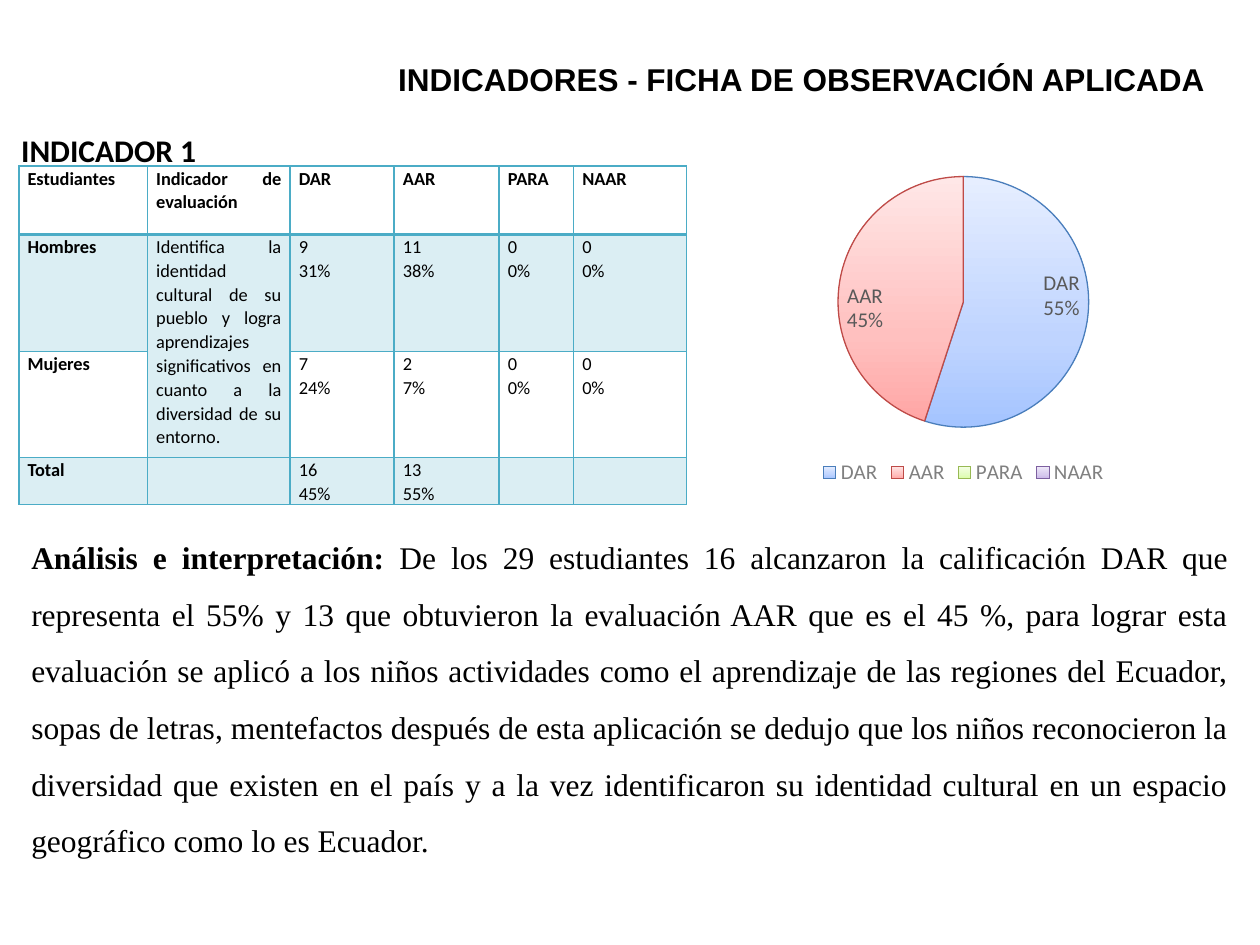
from lxml import etree
from pptx import Presentation
from pptx import util as u
from pptx.chart.data import CategoryChartData
from pptx.dml.color import RGBColor
from pptx.enum import chart as ch, text
from pptx.oxml import parse_xml
from pptx.oxml.ns import nsdecls, qn

Pt = u.Pt
BORDER = "4BACC6"
HEADERS = ["Estudiantes", "Indicador de evaluación", "DAR", "AAR", "PARA", "NAAR"]
CRITERION = ("Identifica la identidad cultural de su pueblo y logra aprendizajes "
             "significativos en cuanto a la diversidad de su entorno.")
ROWS = [
    HEADERS,
    ["Hombres", CRITERION, "9\n31%", "11\n38%", "0\n0%", "0\n0%"],
    ["Mujeres", "", "7\n24%", "2\n7%", "0\n0%", "0\n0%"],
    ["Total", "", "16\n45%", "13\n55%", "", ""],
]
COL_WIDTHS = [73.5, 81.5, 59.5, 60, 42.5, 64.5]
ROW_HEIGHTS = [39, 67, 60.5, 26]
# category: value, outline, gradient stops from bottom to top
SLICES = {
    "DAR": (55, "4A7EBB", ["A4C4FF", "BFD4FF", "E6EEFF"]),
    "AAR": (45, "BE4B48", ["FFA6A5", "FFC0BF", "FFE7E7"]),
    "PARA": (0, "98B954", ["DAFDA7", "E4FCC2", "F5FFE7"]),
    "NAAR": (0, "7D60A0", ["C9B5E8", "D8CBEE", "F0EAF9"]),
}
ANALYSIS = ("De los 29 estudiantes 16 alcanzaron la calificación DAR que representa el 55% "
            "y 13 que obtuvieron la evaluación AAR que es el 45 %, para lograr esta evaluación "
            "se aplicó a los niños actividades como el aprendizaje de las regiones del Ecuador, "
            "sopas de letras, mentefactos después de esta aplicación se dedujo que los niños "
            "reconocieron la diversidad que existen en el país y a la vez identificaron su "
            "identidad cultural en un espacio geográfico como lo es Ecuador.")


def rgb(color):
    return RGBColor.from_string(color)


def set_font(font, name, size, color="000000", bold=False):
    font.name, font.size, font.bold = name, Pt(size), bold
    font.color.rgb = rgb(color)


def add_text(s, box, name, wrap=True):
    tf = s.shapes.add_textbox(*map(Pt, box)).text_frame
    tf.word_wrap = wrap
    p = tf.paragraphs[0]
    set_font(p.font, name, 18, bold=True)
    return p


def add_heading(s, box, words, name, wrap=True):
    add_text(s, box, name, wrap).add_run().text = words


def add_analysis(s, box):
    p = add_text(s, box, "Times New Roman")
    p.alignment = text.PP_ALIGN.JUSTIFY
    p.line_spacing, p.space_after = 1.5, Pt(8)
    for words, bold in (("Análisis e interpretación: ", True), (ANALYSIS, False)):
        r = p.add_run()
        r.text = words
        r.font.bold = bold


def set_borders(cell, row):
    tc_pr = cell._tc.get_or_add_tcPr()
    for side in "LRTB":
        width = 2 if (row, side) in ((0, "B"), (1, "T")) else 1
        tc_pr.append(parse_xml(
            f'<a:ln{side} {nsdecls("a")} w="{Pt(width)}"><a:solidFill>'
            f'<a:srgbClr val="{BORDER}"/></a:solidFill></a:ln{side}>'))


def set_fill(cell, shaded):
    if not shaded:
        cell.fill.background()
        return
    cell.fill.solid()
    cell.fill.fore_color.rgb = rgb(BORDER)
    color = cell._tc.tcPr.find(".//" + qn("a:solidFill") + "[last()]/" + qn("a:srgbClr"))
    color = cell._tc.tcPr.find(qn("a:solidFill")).find(qn("a:srgbClr"))
    etree.SubElement(color, qn("a:alpha"), val="20000")


def add_results_table(s, left, top):
    table = s.shapes.add_table(len(ROWS), len(HEADERS), Pt(left), Pt(top),
                               Pt(sum(COL_WIDTHS)), Pt(sum(ROW_HEIGHTS))).table
    table.first_row = table.horz_banding = False
    for col, width in zip(table.columns, COL_WIDTHS):
        col.width = Pt(width)
    for row, height in zip(table.rows, ROW_HEIGHTS):
        row.height = Pt(height)
    table.cell(1, 1).merge(table.cell(2, 1))
    for i, values in enumerate(ROWS):
        for j, value in enumerate(values):
            cell = table.cell(i, j)
            cell.margin_left = cell.margin_right = Pt(5)
            cell.margin_top = cell.margin_bottom = 0
            cell.text = value
            for p in cell.text_frame.paragraphs:
                p.alignment, p.line_spacing = text.PP_ALIGN.JUSTIFY, 1.07
                set_font(p.font, "Calibri", 10.5, bold=i == 0 or j == 0)
            set_borders(cell, i)
            set_fill(cell, i in (1, 3) or (i, j) == (2, 1))


def style_slice(point, outline, colors):
    point.format.line.color.rgb = rgb(outline)
    point.format.line.width = Pt(0.75)
    stops = "".join(f'<a:gs pos="{pos}"><a:srgbClr val="{c}"/></a:gs>'
                    for pos, c in zip((0, 35000, 100000), colors))
    sp_pr = point.format.line._get_or_add_ln().getparent()
    sp_pr.insert(0, parse_xml(f'<a:gradFill {nsdecls("a")} rotWithShape="1"><a:gsLst>{stops}'
                              '</a:gsLst><a:lin ang="16200000" scaled="1"/></a:gradFill>'))


def add_pie(s, box):
    data = CategoryChartData()
    data.categories = list(SLICES)
    data.add_series("Series 1", [value for value, *_ in SLICES.values()])
    chart = s.shapes.add_chart(ch.XL_CHART_TYPE.PIE, *map(Pt, box), data).chart
    chart.has_title = False
    set_font(chart.font, "Calibri", 10)
    chart.has_legend = True
    chart.legend.position = ch.XL_LEGEND_POSITION.BOTTOM
    chart.legend.include_in_layout = False
    set_font(chart.legend.font, "Calibri", 12, "808080")

    # Labels: category over percentage, none on empty slices
    series = chart.plots[0].series[0]
    labels = series.data_labels
    labels.show_category_name = labels.show_percentage = True
    labels.show_value = False
    labels.number_format, labels.number_format_is_linked = "0%", False
    labels.position = ch.XL_LABEL_POSITION.INSIDE_END
    set_font(labels.font, "Calibri", 12, "595959")
    d_lbls = labels._element
    separator = parse_xml(f'<c:separator {nsdecls("c")}>\n</c:separator>')
    last_flag = d_lbls.find(qn("c:showBubbleSize"))
    if last_flag is None:
        last_flag = d_lbls.find(qn("c:showPercent"))
    last_flag.addnext(separator)
    empty = 0
    for i, (value, outline, colors) in enumerate(SLICES.values()):
        style_slice(series.points[i], outline, colors)
        if not value:
            d_lbls.insert(empty, parse_xml(f'<c:dLbl {nsdecls("c")}><c:idx val="{i}"/>'
                                           '<c:delete val="1"/></c:dLbl>'))
            empty += 1

    # Place of the pie within the chart
    area = chart._chartSpace.chart.plotArea
    for old in area.findall(qn("c:layout")):
        area.remove(old)
    sizes = "".join(f'<c:{k} val="{v}"/>' for k, v in
                    (("x", 0.25), ("y", 0.05), ("w", 0.5), ("h", 0.76)))
    area.insert(0, parse_xml(
        f'<c:layout {nsdecls("c")}><c:manualLayout><c:layoutTarget val="inner"/>'
        f'<c:xMode val="edge"/><c:yMode val="edge"/>{sizes}</c:manualLayout></c:layout>'))


def main():
    prs = Presentation()
    prs.slide_width, prs.slide_height = Pt(720), Pt(540)
    s = prs.slides.add_slide(prs.slide_layouts[6])
    add_heading(s, (220.5, 31, 484.5, 29), "INDICADORES - FICHA DE OBSERVACIÓN APLICADA",
                "Arial", wrap=False)
    add_results_table(s, 10.8, 95)
    add_pie(s, (405.5, 91.5, 290, 188.5))
    add_heading(s, (5, 71.3, 137, 29), "INDICADOR 1", "Calibri")
    add_analysis(s, (10.8, 293, 698.4, 204))
    prs.save("out.pptx")


if __name__ == "__main__":
    main()
